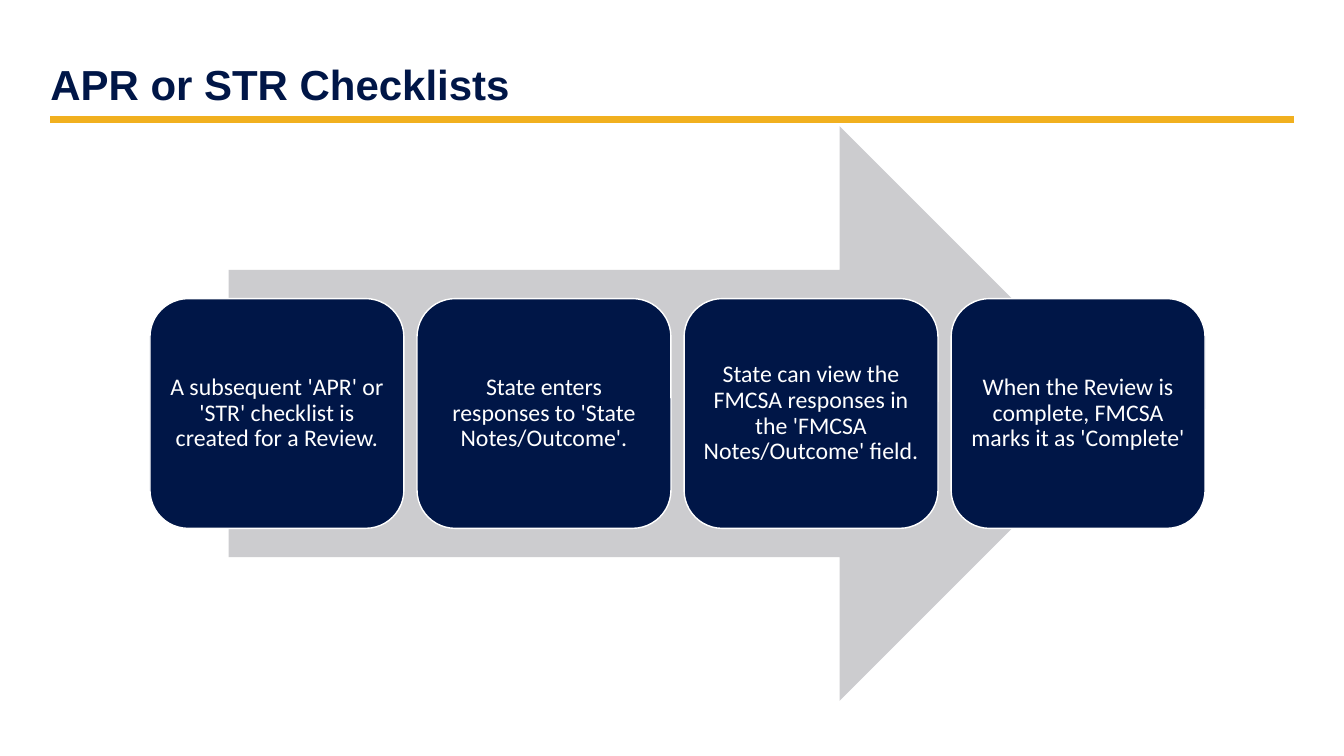
from pptx import Presentation
from pptx.dml.color import RGBColor
from pptx.enum.shapes import MSO_CONNECTOR, MSO_SHAPE
from pptx.enum.text import MSO_ANCHOR, PP_ALIGN
from pptx.util import Cm, Pt
from lxml.etree import SubElement
from pptx.oxml.ns import qn

TITLE = "APR or STR Checklists"
STEPS = [
    "A subsequent 'APR' or 'STR' checklist is created for a Review.",
    "State enters responses to 'State Notes/Outcome'.",
    "State can view the FMCSA responses in the 'FMCSA Notes/Outcome' field.",
    "When the Review is complete, FMCSA marks it as 'Complete'",
]
COLORS = {"navy": "001647", "gold": "F1B01F", "gray": "CCCCCF", "white": "FFFFFF"}
EDGE, WIDTH = 1.27, 31.33
RULE_Y = 3.0
ARROW = (5.76, 3.18, 22.64, 14.48)
BOX_X, BOX_W, BOX_H, GAP = 3.78, 6.4, 5.79, 0.33


def color(name):
    """Return the named colour."""
    return RGBColor.from_string(COLORS[name])


def add_block(slide, kind, place, fill):
    """Add a filled shape without outline or shadow."""
    block = slide.shapes.add_shape(kind, *map(Cm, place))
    block.shadow.inherit = False
    block.fill.solid()
    block.fill.fore_color.rgb = color(fill)
    block.line.fill.background()
    return block


def set_text(shape, text, font, size, tone, inset):
    """Write one styled paragraph into a shape."""
    frame = shape.text_frame
    frame.word_wrap = True
    frame.margin_left, frame.margin_top, frame.margin_right, frame.margin_bottom = map(Cm, inset)
    para = frame.paragraphs[0]
    para.text = text
    para.line_spacing = 0.9
    para.font.name = font
    para.font.size = Pt(size)
    para.font.color.rgb = color(tone)
    return frame, para


def add_title(slide):
    """Add the heading and the gold rule below it."""
    rule = slide.shapes.add_connector(
        MSO_CONNECTOR.STRAIGHT, Cm(EDGE), Cm(RULE_Y), Cm(EDGE + WIDTH), Cm(RULE_Y))
    rule.line.color.rgb = color("gold")
    rule.line.width = Pt(5)
    SubElement(rule._element.spPr, qn("a:effectLst"))
    head = slide.shapes.add_textbox(Cm(EDGE), Cm(0.36), Cm(WIDTH), Cm(2.54))
    frame, para = set_text(head, TITLE, "Arial", 30, "navy", (0, 0.13, 0.25, 0.13))
    frame.vertical_anchor = MSO_ANCHOR.BOTTOM
    para.font.bold = True


def add_steps(slide):
    """Add the arrow and the row of steps centred on it."""
    add_block(slide, MSO_SHAPE.RIGHT_ARROW, ARROW, "gray")
    top = ARROW[1] + (ARROW[3] - BOX_H) / 2
    for i, step in enumerate(STEPS):
        left = BOX_X + i * (BOX_W + GAP)
        box = add_block(slide, MSO_SHAPE.ROUNDED_RECTANGLE, (left, top, BOX_W, BOX_H), "navy")
        box.line.color.rgb = color("white")
        box.line.width = Pt(1)
        frame, para = set_text(box, step, "Calibri", 17, "white", [0.18] * 4)
        frame.vertical_anchor = MSO_ANCHOR.MIDDLE
        para.alignment = PP_ALIGN.CENTER


def main():
    """Build and save the slide."""
    deck = Presentation()
    deck.slide_width, deck.slide_height = Cm(33.87), Cm(19.05)
    slide = deck.slides.add_slide(deck.slide_layouts[6])
    add_title(slide)
    add_steps(slide)
    deck.save("out.pptx")


if __name__ == "__main__":
    main()
